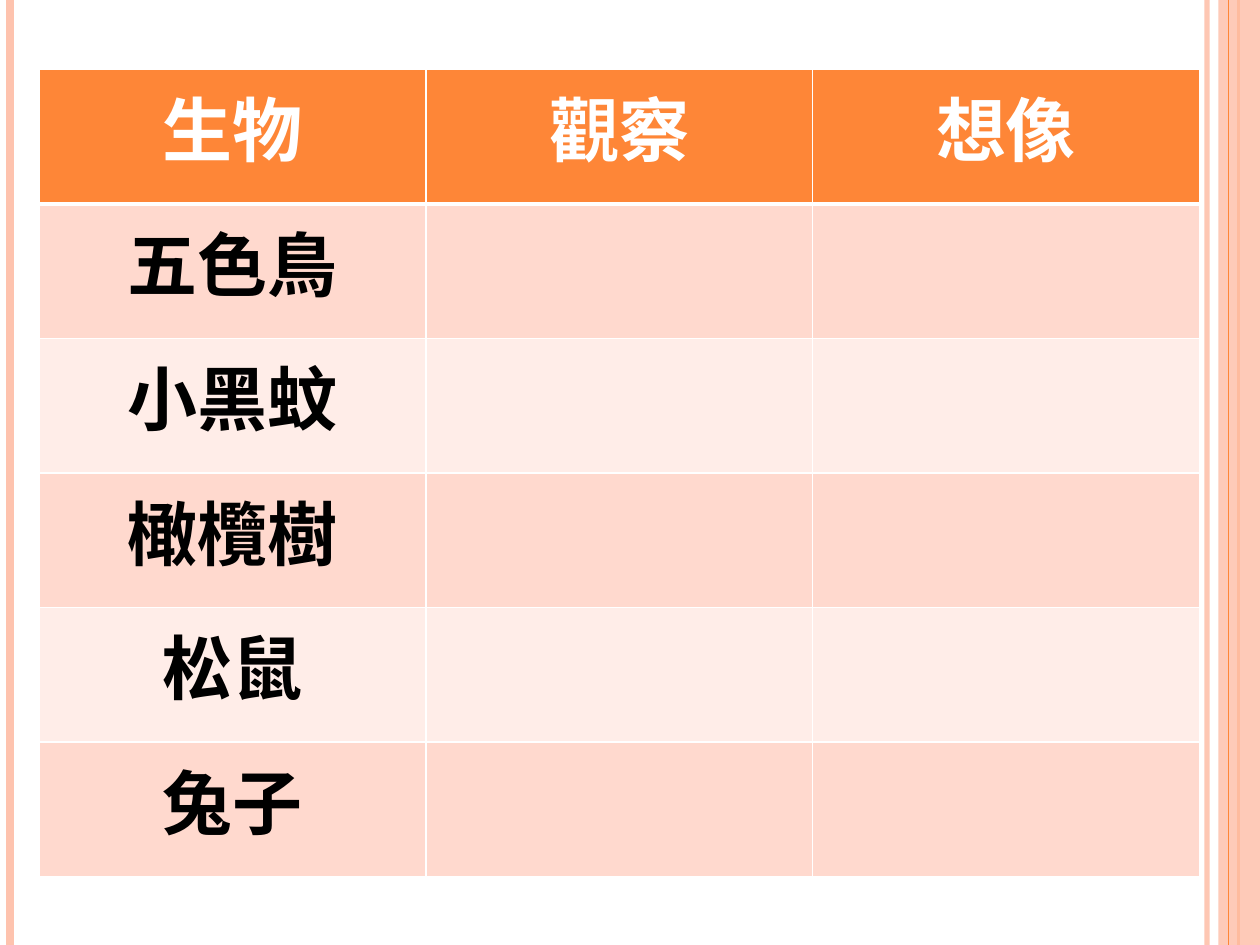
import pptx
import pptx.dml.color
import pptx.enum.shapes
import pptx.enum.text
import pptx.oxml.ns
import pptx.util
from lxml import etree
from pptx.util import Inches

RGBColor = pptx.dml.color.RGBColor
WHITE = RGBColor(0xFF, 0xFF, 0xFF)
BLACK = RGBColor(0x00, 0x00, 0x00)
ORANGE = RGBColor(0xFE, 0x86, 0x37)
PEACH = RGBColor(0xFE, 0xC3, 0xAE)
BAND_DARK = RGBColor(0xFF, 0xD9, 0xCE)
BAND_LIGHT = RGBColor(0xFF, 0xED, 0xE8)

SLIDE_WIDTH, SLIDE_HEIGHT = 10, 7.5
HEADINGS = ["生物", "觀察", "想像"]
CREATURES = ["五色鳥", "小黑蚊", "橄欖樹", "松鼠", "兔子"]


def add_xml(parent, tag, **attributes):
    return etree.SubElement(parent, pptx.oxml.ns.qn(tag), attributes)


def set_alpha(properties, percent):
    """Make the first colour under the properties partly transparent."""
    color = properties.find(".//" + pptx.oxml.ns.qn("a:srgbClr"))
    add_xml(color, "a:alpha", val=str(percent * 1000))


class SlideBuilder:
    font_name = "Noto Sans CJK SC"
    font_format = {"name": font_name, "size": pptx.util.Pt(40), "bold": True}

    def __init__(self, slide):
        self.slide = slide

    def vertical_line(self, x, color, width, alpha=100):
        line = self.slide.shapes.add_connector(
            pptx.enum.shapes.MSO_CONNECTOR.STRAIGHT,
            Inches(x), 0, Inches(x), Inches(SLIDE_HEIGHT))
        line.line.color.rgb = color
        line.line.width = pptx.util.Pt(width)
        properties = line._element.spPr
        if alpha < 100:
            set_alpha(properties, alpha)
        add_xml(properties, "a:effectLst")

    def side_band(self, left, width, color, alpha):
        band = self.slide.shapes.add_shape(
            pptx.enum.shapes.MSO_SHAPE.RECTANGLE,
            Inches(left), 0, Inches(width), Inches(SLIDE_HEIGHT))
        band.shadow.inherit = False
        band.fill.solid()
        band.fill.fore_color.rgb = color
        band.line.fill.background()
        set_alpha(band._element.spPr, alpha)

    def table(self, rows, left, top, width, height):
        table = self.slide.shapes.add_table(
            len(rows), len(rows[0]), Inches(left), Inches(top),
            Inches(width), Inches(height)).table
        for row_index, texts in enumerate(rows):
            is_header = row_index == 0
            band = BAND_DARK if row_index % 2 else BAND_LIGHT
            fill = ORANGE if is_header else band
            color = WHITE if is_header else BLACK
            borders = {"L": 1, "R": 1, "T": 3 if row_index == 1 else 1,
                       "B": 3 if is_header else 1}
            for column_index, text in enumerate(texts):
                cell = table.cell(row_index, column_index)
                self.cell_borders(cell, borders)
                cell.fill.solid()
                cell.fill.fore_color.rgb = fill
                self.cell_text(cell, text, color)

    def cell_borders(self, cell, widths):
        properties = cell._tc.get_or_add_tcPr()
        for side, width in widths.items():
            border = add_xml(properties, f"a:ln{side}",
                             w=str(pptx.util.Pt(width)))
            add_xml(add_xml(border, "a:solidFill"), "a:srgbClr",
                    val=str(WHITE))

    def cell_text(self, cell, text, color):
        para = cell.text_frame.paragraphs[0]
        para.alignment = pptx.enum.text.PP_ALIGN.CENTER
        if not text:
            return
        span = para.add_run()
        span.text = text
        for name, value in self.font_format.items():
            setattr(span.font, name, value)
        span.font.color.rgb = color
        add_xml(span._r.get_or_add_rPr(), "a:ea", typeface=self.font_name)


def main():
    deck = pptx.Presentation()
    deck.slide_width = Inches(SLIDE_WIDTH)
    deck.slide_height = Inches(SLIDE_HEIGHT)
    page = SlideBuilder(deck.slides.add_slide(deck.slide_layouts[6]))

    page.vertical_line(9.58, PEACH, 3, alpha=93)
    page.vertical_line(0.08, PEACH, 4.5)
    page.vertical_line(9.83, ORANGE, 1.5)
    page.side_band(9.67, 0.33, PEACH, alpha=87)
    page.vertical_line(9.75, ORANGE, 0.75)

    rows = [HEADINGS] + [[creature, "", ""] for creature in CREATURES]
    page.table(rows, 0.31, 0.55, 9.21, 6.41)
    deck.save("out.pptx")


if __name__ == "__main__":
    main()
